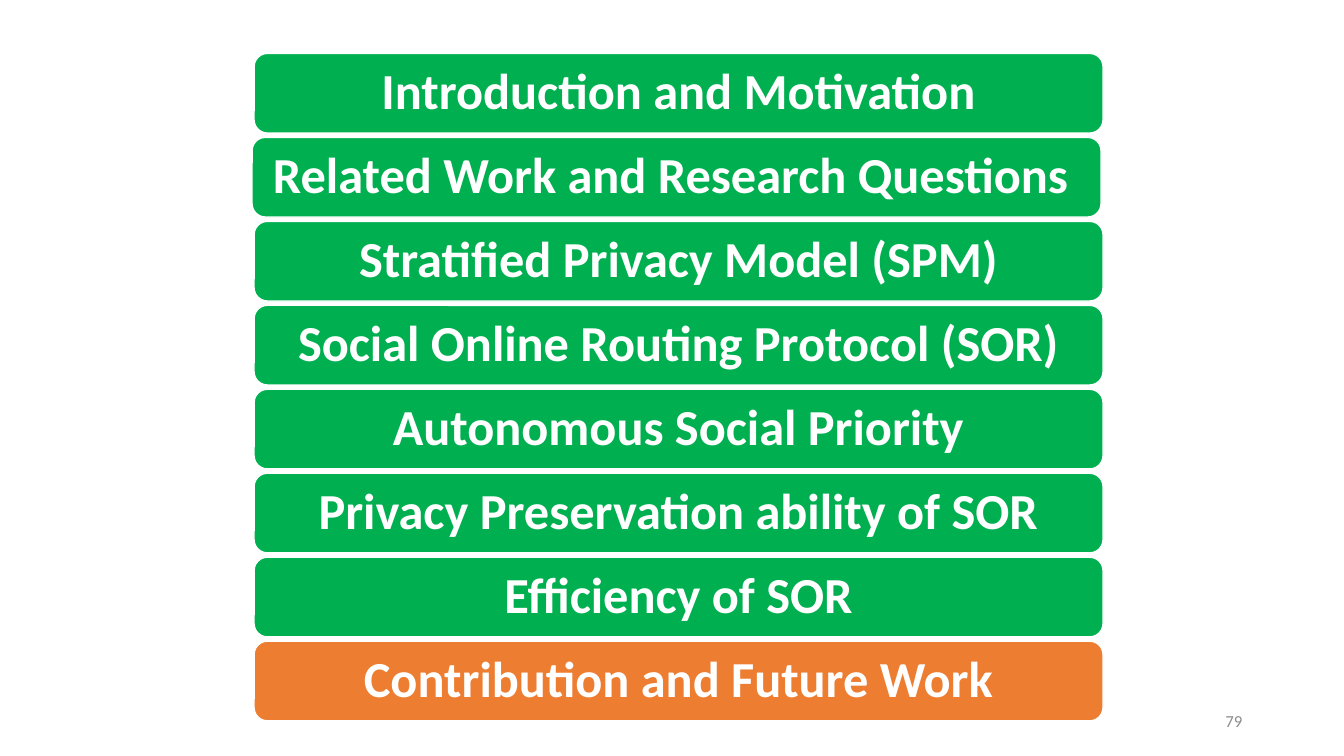
from dataclasses import dataclass

import pptx
import pptx.dml.color
import pptx.enum.shapes
import pptx.enum.text
import pptx.slide
import pptx.util

Inches, Pt = pptx.util.Inches, pptx.util.Pt
RGBColor = pptx.dml.color.RGBColor
PP_ALIGN = pptx.enum.text.PP_ALIGN

GREEN = RGBColor(0x00, 0xB0, 0x50)
ORANGE = RGBColor(0xED, 0x7D, 0x31)
WHITE = RGBColor(0xFF, 0xFF, 0xFF)
GRAY = RGBColor(0x8C, 0x8C, 0x8C)
FONT = "Calibri"

# Agenda column, in inches: one bar per row
LEFT, TOP = 2.52, 0.53
BAR_W, BAR_H = 8.42, 0.79
ROW_PITCH = 0.833


@dataclass(frozen=True)
class AgendaItem:
    text: str
    fill: RGBColor = GREEN
    shift: float = 0


AGENDA = [
    AgendaItem("Introduction and Motivation"),
    AgendaItem("Related Work and Research Questions ", shift=-0.02),
    AgendaItem("Stratified Privacy Model (SPM)"),
    AgendaItem("Social Online Routing Protocol (SOR)"),
    AgendaItem("Autonomous Social Priority"),
    AgendaItem("Privacy Preservation ability of SOR"),
    AgendaItem("Efficiency of SOR"),
    AgendaItem("Contribution and Future Work", ORANGE),
]


def write(tf: pptx.text.text.TextFrame, text: str, size: float, color: RGBColor,
          align: PP_ALIGN, bold: bool = False) -> None:
    tf.word_wrap = True
    tf.vertical_anchor = pptx.enum.text.MSO_ANCHOR.MIDDLE
    p = tf.paragraphs[0]
    p.alignment = align
    r = p.add_run()
    r.text = text
    r.font.name, r.font.size, r.font.bold = FONT, Pt(size), bold
    r.font.color.rgb = color


def add_bar(s: pptx.slide.Slide, row: int, item: AgendaItem) -> None:
    sp = s.shapes.add_shape(
        pptx.enum.shapes.MSO_SHAPE.ROUNDED_RECTANGLE,
        Inches(LEFT + item.shift), Inches(TOP + row * ROW_PITCH),
        Inches(BAR_W), Inches(BAR_H))
    sp.shadow.inherit = False
    sp.fill.solid()
    sp.fill.fore_color.rgb = item.fill
    sp.line.color.rgb = WHITE
    sp.line.width = Pt(1)
    tf = sp.text_frame
    tf.margin_left = tf.margin_right = Inches(0.15)
    tf.margin_top = tf.margin_bottom = Inches(0.07)
    write(tf, item.text, 36, WHITE, PP_ALIGN.CENTER, bold=True)
    tf.paragraphs[0].line_spacing = 0.9


def main() -> None:
    prs = pptx.Presentation()
    prs.slide_width, prs.slide_height = Inches(13.33), Inches(7.5)
    s = prs.slides.add_slide(prs.slide_layouts[6])

    # Agenda, with the current section in orange
    for row, item in enumerate(AGENDA):
        add_bar(s, row, item)

    # Slide number
    number = s.shapes.add_textbox(Inches(9.42), Inches(6.95), Inches(3), Inches(0.4))
    write(number.text_frame, "79", 12, GRAY, PP_ALIGN.RIGHT)

    prs.save("out.pptx")


if __name__ == "__main__":
    main()
